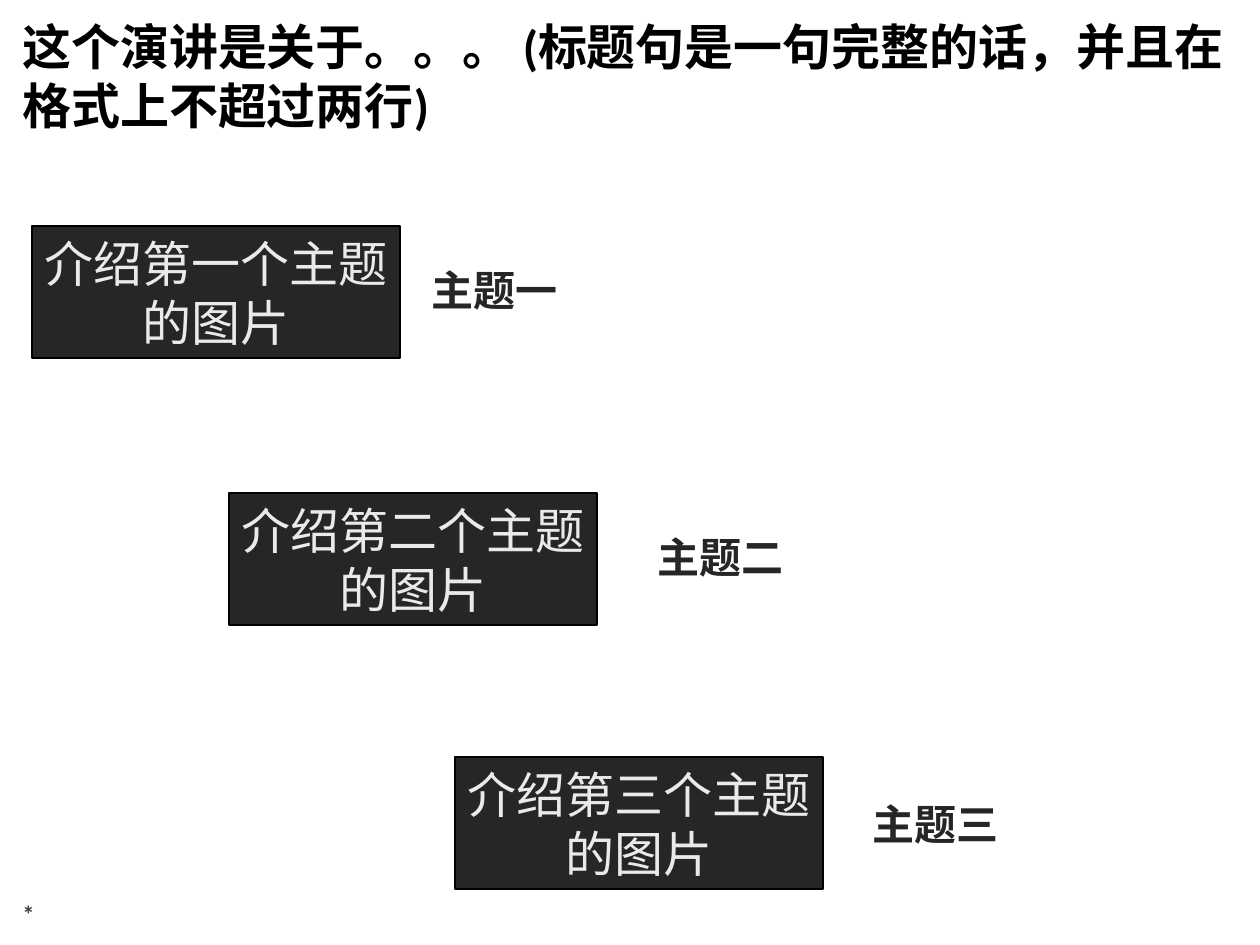
from pptx import Presentation
from pptx.dml.color import RGBColor
from pptx.enum.shapes import MSO_SHAPE
from pptx.enum.text import MSO_ANCHOR, PP_ALIGN
from pptx.util import Emu, Pt

PX = 914400 / 126

TITLE = "这个演讲是关于。。。 (标题句是一句完整的话，并且在格式上不超过两行)"
FOOTNOTE = "*"
# panel text, panel position, label, label position
TOPICS = [
    ("介绍第一个主题的图片", (32, 226), "主题一", (423, 261)),
    ("介绍第二个主题的图片", (229, 493), "主题二", (649, 528)),
    ("介绍第三个主题的图片", (455, 757), "主题三", (864, 795)),
]
PANEL_SIZE = (368, 132)
LABEL_SIZE = (164, 58)


def px(value):
    return Emu(round(value * PX))


def rgb(value):
    return RGBColor.from_string(value)


def write(shape, text, size, color, bold=True, align=PP_ALIGN.LEFT,
          anchor=MSO_ANCHOR.TOP, inset=(0.1, 0.05)):
    """Fill a shape with one paragraph; inset is (side, top and bottom) in inches."""
    frame = shape.text_frame
    side, end = (Emu(round(914400 * part)) for part in inset)
    layout = {"word_wrap": True, "vertical_anchor": anchor,
              "margin_left": side, "margin_right": side,
              "margin_top": end, "margin_bottom": end}
    for key, value in layout.items():
        setattr(frame, key, value)
    paragraph = frame.paragraphs[0]
    paragraph.alignment = align
    run = paragraph.add_run()
    run.text = text
    for key, value in {"name": "Calibri", "size": Pt(size), "bold": bold}.items():
        setattr(run.font, key, value)
    run.font.color.rgb = rgb(color)


def add_text(slide, box, text, size, color, **layout):
    write(slide.shapes.add_textbox(*map(px, box)), text, size, color, **layout)


def add_panel(slide, box, text):
    panel = slide.shapes.add_shape(MSO_SHAPE.RECTANGLE, *map(px, box))
    panel.shadow.inherit = False
    panel.fill.solid()
    panel.fill.fore_color.rgb = rgb("262626")
    panel.line.color.rgb = rgb("000000")
    panel.line.width = Pt(0.75)
    write(panel, text, 28, "EAEAEA", bold=False,
          align=PP_ALIGN.CENTER, anchor=MSO_ANCHOR.MIDDLE)


def main():
    deck = Presentation()
    deck.slide_width, deck.slide_height = px(1260), px(945)
    slide = deck.slides.add_slide(deck.slide_layouts[6])
    add_text(slide, (10, 885, 294, 50), FOOTNOTE, 14, "404040",
             anchor=MSO_ANCHOR.BOTTOM)
    for panel_text, panel_at, label, label_at in TOPICS:
        add_text(slide, label_at + LABEL_SIZE, label, 24, "262626",
                 inset=(0.07, 0.03))
        add_panel(slide, panel_at + PANEL_SIZE, panel_text)
    add_text(slide, (10, 10, 1245, 130), TITLE, 28, "000000")
    deck.save("out.pptx")


if __name__ == "__main__":
    main()
